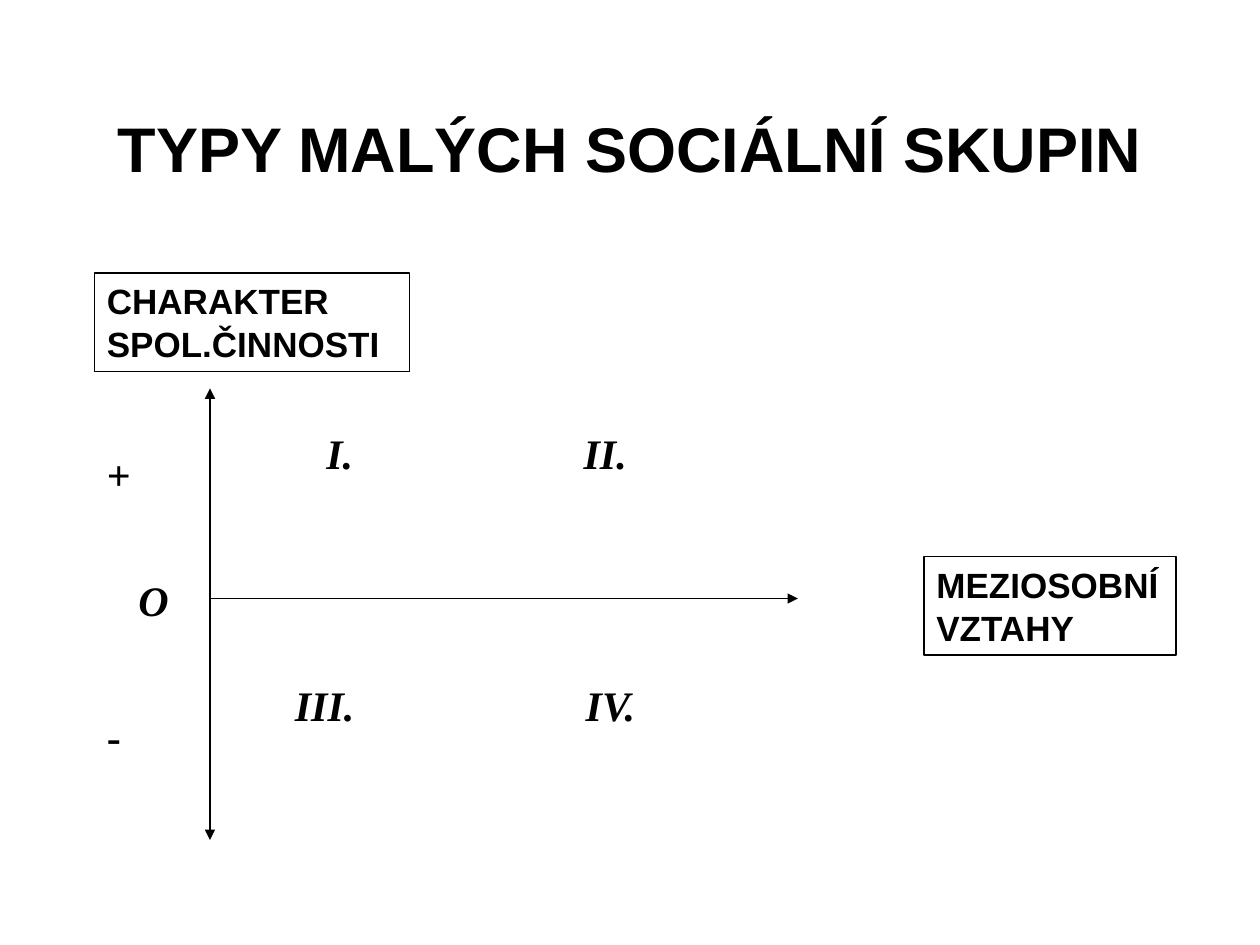
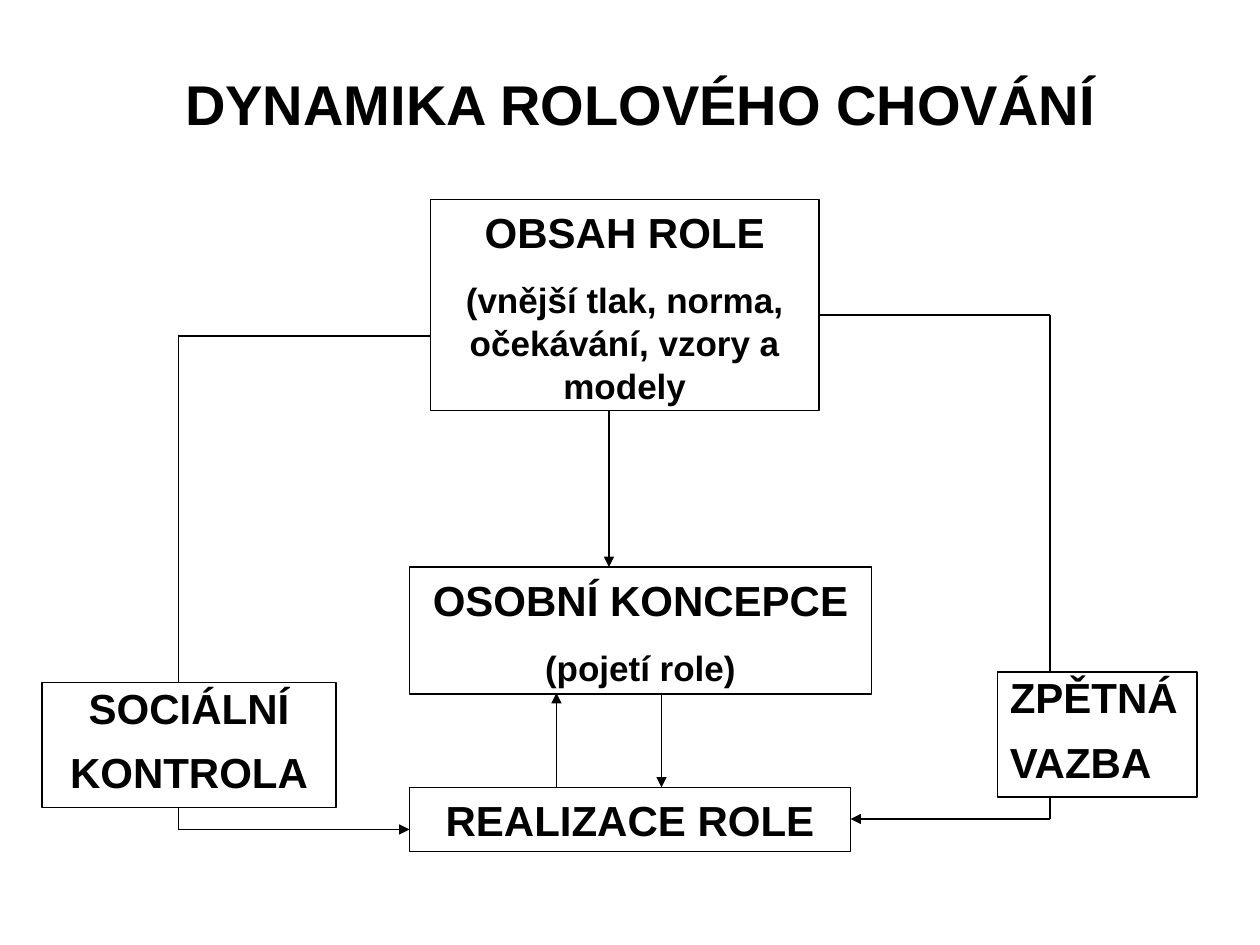
from dataclasses import dataclass
from itertools import pairwise

from lxml import etree
from pptx import Presentation
from pptx.dml.color import RGBColor
from pptx.enum.shapes import MSO_CONNECTOR, MSO_SHAPE
from pptx.enum.text import MSO_ANCHOR, PP_ALIGN
from pptx.oxml.ns import qn
from pptx.util import Emu, Pt

LEFT, CENTER = PP_ALIGN.LEFT, PP_ALIGN.CENTER
TOP, MIDDLE = MSO_ANCHOR.TOP, MSO_ANCHOR.MIDDLE
RECT = MSO_SHAPE.RECTANGLE
STRAIGHT = MSO_CONNECTOR.STRAIGHT
PX = 7620
BLANK = 6
ARROW = ("a:tailEnd",)
BOTH = ("a:headEnd", "a:tailEnd")


@dataclass(frozen=True)
class Theme:
    ink: RGBColor = RGBColor(0, 0, 0)
    paper: RGBColor = RGBColor(255, 255, 255)
    sans: str = "Arial"
    serif: str = "Times New Roman"
    title_large: int = 36
    title_small: int = 32
    head: int = 24
    body: int = 20
    line: float = 0.75
    leading: float = 1.22
    tight: float = 1.04
    gap: int = 12


class Deck:
    def __init__(self, theme, width, height):
        self.theme = theme
        self.prs = Presentation()
        self.prs.slide_width, self.prs.slide_height = self.px(width, height)
        self.s = None

    def px(self, *lengths):
        return [Emu(n * PX) for n in lengths]

    def slide(self):
        self.s = self.prs.slides.add_slide(self.prs.slide_layouts[BLANK])
        fill = self.s.background.fill
        fill.solid()
        fill.fore_color.rgb = self.theme.paper

    def set_text(self, sp, rows, align=LEFT, anchor=TOP, leading=None, **style):
        tf = sp.text_frame
        tf.word_wrap = True
        tf.vertical_anchor = anchor
        font = {"name": self.theme.sans, "bold": True, **style}
        for i, (text, size) in enumerate(rows):
            p = tf.add_paragraph() if i else tf.paragraphs[0]
            p.alignment = align
            p.line_spacing = Pt(size * (leading or self.theme.leading))
            p.space_before = Pt(self.theme.gap if i else 0)
            r = p.add_run()
            r.text = text
            for key, value in {**font, "size": Pt(size)}.items():
                setattr(r.font, key, value)
            r.font.color.rgb = self.theme.ink

    def text(self, at, rows, **style):
        sp = self.s.shapes.add_textbox(*self.px(*at))
        self.set_text(sp, rows, **style)
        return sp

    def title(self, at, text, size):
        self.text(at, [(text, size)], align=CENTER, anchor=MIDDLE)

    def label(self, at, text, italic=False, stops=()):
        sp = self.text(at, [(text, self.theme.head)],
                       name=self.theme.serif, italic=italic)
        if stops:
            pPr = sp.text_frame.paragraphs[0]._p.get_or_add_pPr()
            tabs = etree.SubElement(pPr, qn("a:tabLst"))
            for pos in self.px(*stops):
                etree.SubElement(tabs, qn("a:tab"), pos=str(pos), algn="l")

    def box(self, at, rows, **style):
        sp = self.s.shapes.add_shape(RECT, *self.px(*at))
        sp.shadow.inherit = False
        sp.fill.background()
        sp.line.color.rgb = self.theme.ink
        sp.line.width = Pt(self.theme.line)
        self.set_text(sp, rows, **style)

    def polyline(self, *points, ends=()):
        for start, end in pairwise(points):
            c = self.s.shapes.add_connector(STRAIGHT, *self.px(*start, *end))
            c.line.color.rgb = self.theme.ink
            c.line.width = Pt(self.theme.line)
            spPr = c._element.spPr
            if end == points[-1]:
                for tag in ends:
                    etree.SubElement(spPr.find(qn("a:ln")), qn(tag),
                                     type="triangle")
            etree.SubElement(spPr, qn("a:effectLst"))


def group_types(d):
    t = d.theme
    d.slide()
    d.title((90, 90, 1020, 100), "TYPY MALÝCH SOCIÁLNÍ SKUPIN", t.title_large)
    d.box((90, 260, 300, 94), [("CHARAKTER SPOL.ČINNOSTI", t.body)])
    d.box((880, 530, 240, 94), [("MEZIOSOBNÍ VZTAHY", t.body)])
    d.polyline((200, 370), (200, 800), ends=BOTH)
    d.polyline((200, 570), (760, 570), ends=ARROW)
    d.label((280, 400, 420, 60), "\tI.\tII.", italic=True, stops=(19, 264))
    d.label((260, 640, 440, 60), "\tIII.\tIV.", italic=True, stops=(9, 286))
    d.label((90, 420, 60, 60), "+")
    d.label((90, 670, 60, 60), "-")
    d.label((120, 540, 60, 60), "O", italic=True)


def role_dynamics(d):
    t = d.theme
    d.slide()
    d.title((100, 43, 1020, 110), "DYNAMIKA ROLOVÉHO CHOVÁNÍ", t.title_small)
    d.box((410, 190, 370, 201),
          [("OBSAH ROLE", t.head),
           ("(vnější tlak, norma, očekávání, vzory a modely", t.body)],
          align=CENTER)
    d.box((390, 540, 440, 121),
          [("OSOBNÍ KONCEPCE", t.head), ("(pojetí role)", t.body)],
          align=CENTER)
    d.box((390, 750, 420, 61), [("REALIZACE ROLE", t.head)], align=CENTER)
    d.box((950, 640, 190, 119), [("ZPĚTNÁ", t.head), ("VAZBA", t.head)],
          leading=t.tight)
    d.box((40, 650, 280, 119), [("SOCIÁLNÍ", t.head), ("KONTROLA", t.head)],
          align=CENTER, leading=t.tight)
    d.polyline((780, 300), (1000, 300), (1000, 640))
    d.polyline((1000, 760), (1000, 780), (810, 780), ends=ARROW)
    d.polyline((170, 650), (170, 320), (410, 320))
    d.polyline((170, 770), (170, 790), (390, 790), ends=ARROW)
    d.polyline((580, 390), (580, 540), ends=ARROW)
    d.polyline((630, 660), (630, 750), ends=ARROW)
    d.polyline((530, 750), (530, 660), ends=ARROW)


def main():
    d = Deck(Theme(), 1200, 900)
    group_types(d)
    role_dynamics(d)
    d.prs.save("out.pptx")


if __name__ == "__main__":
    main()
